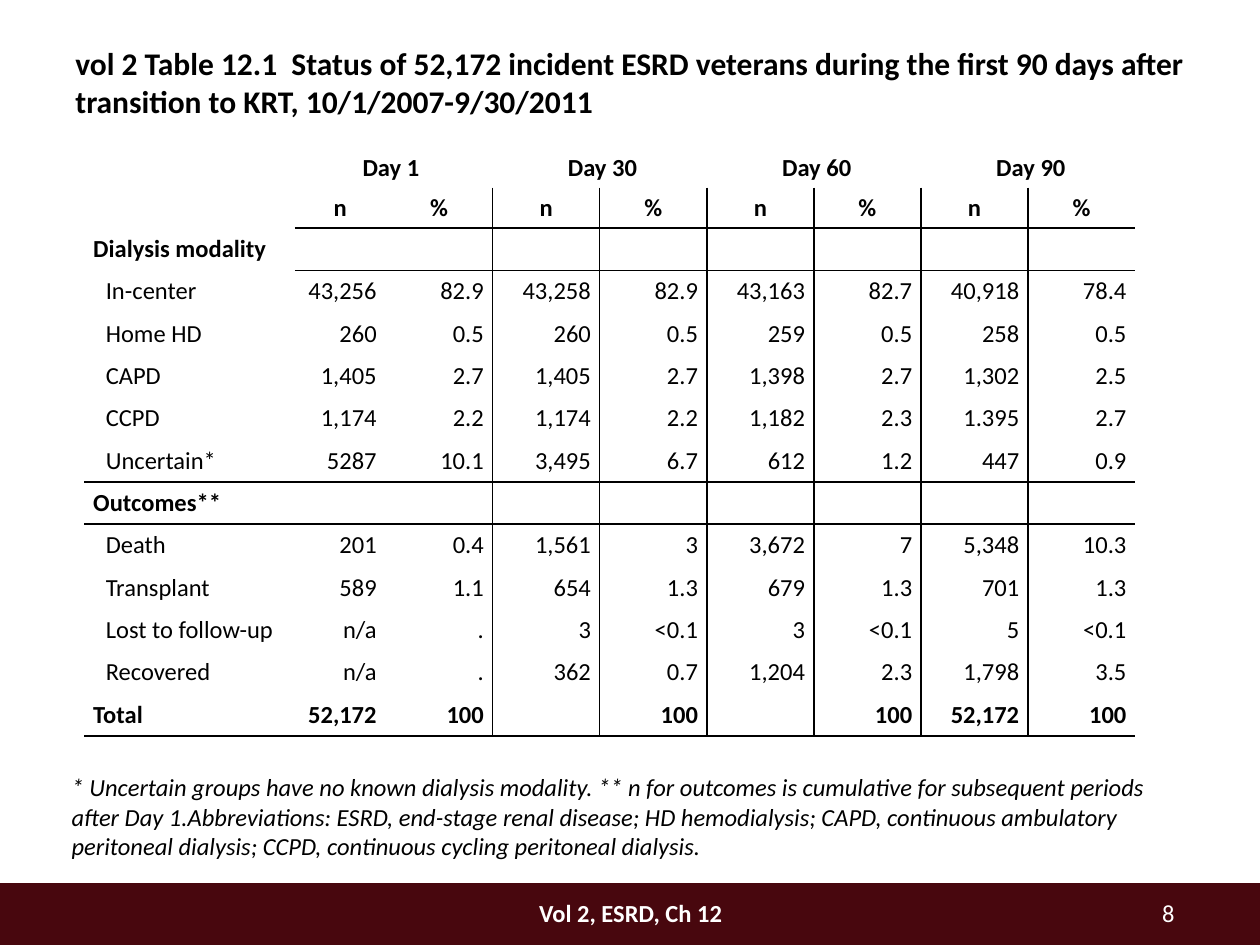
from lxml.etree import SubElement
from pptx import Presentation
from pptx.dml.color import RGBColor
from pptx.enum.shapes import MSO_SHAPE
from pptx.enum.text import MSO_ANCHOR, PP_ALIGN
from pptx.oxml.ns import qn
from pptx.util import Inches, Pt

COLORS = {"text": "000000", "footer": "48070E", "footer_text": "FFFFFF"}
FONT = "Calibri"
NO_GRID_STYLE = "{2D5ABB26-0587-4C30-8999-92F81FD0307C}"

TITLE = ("vol 2 Table 12.1  Status of 52,172 incident ESRD veterans during the first 90 days "
         "after transition to KRT, 10/1/2007-9/30/2011")
FOOTNOTE = ("* Uncertain groups have no known dialysis modality. ** n for outcomes is cumulative "
            "for subsequent periods after Day 1.Abbreviations: ESRD, end-stage renal disease; "
            "HD hemodialysis; CAPD, continuous ambulatory peritoneal dialysis; CCPD, continuous "
            "cycling peritoneal dialysis.")
DAYS = ["Day 1 ", " Day 30", " Day 60", " Day 90"]
ROWS = [
    ["", *(text for day in DAYS for text in (day, ""))],
    ["", *["n", "%"] * len(DAYS)],
    ["Dialysis modality", *[""] * 8],
    ["In-center", "43,256", "82.9", "43,258", "82.9", "43,163", "82.7", "40,918", "78.4"],
    ["Home HD", "260", "0.5", "260", "0.5", "259", "0.5", "258", "0.5"],
    ["CAPD", "1,405", "2.7", "1,405", "2.7", "1,398", "2.7", "1,302", "2.5"],
    ["CCPD", "1,174", "2.2", "1,174", "2.2", "1,182", "2.3", "1.395", "2.7"],
    ["Uncertain*", "5287", "10.1", "3,495", "6.7", "612", "1.2", "447", "0.9"],
    ["Outcomes**", *[""] * 8],
    ["Death", "201", "0.4", "1,561", "3", "3,672", "7", "5,348", "10.3"],
    ["Transplant", "589", "1.1", "654", "1.3", "679", "1.3", "701", "1.3"],
    ["Lost to follow-up", "n/a", ".", "3", "<0.1", "3", "<0.1", "5", "<0.1"],
    ["Recovered", "n/a", ".", "362", "0.7", "1,204", "2.3", "1,798", "3.5"],
    ["Total", "52,172", "100", "", "100", "", "100", "52,172", "100"],
]
HEADER_ROWS = 2
BOLD_ROWS = {0, 1, 2, 8, 13}
RULED_ROWS = {1, 7, 13}
DIVIDED_COLUMNS = {2, 4, 6}
COLUMN_WIDTHS = [1.67, 0.72] + [0.85] * 7
TABLE_HEIGHT = 4.67
HEADER_HEIGHT = 0.32


def style_paragraph(paragraph, size=14, color="text", bold=False, italic=False, align=PP_ALIGN.LEFT):
    paragraph.alignment = align
    for run in paragraph.runs:
        run.font.name = FONT
        run.font.size = Pt(size)
        run.font.bold = bold
        run.font.italic = italic
        run.font.color.rgb = RGBColor.from_string(COLORS[color])


def add_text(slide, text, left, top, width, height, **style):
    text_frame = slide.shapes.add_textbox(
        Inches(left), Inches(top), Inches(width), Inches(height)).text_frame
    text_frame.word_wrap = True
    text_frame.text = text
    style_paragraph(text_frame.paragraphs[0], **style)


def cell_borders(row, column):
    rules = {
        "a:lnL": row > 0 and column - 1 in DIVIDED_COLUMNS,
        "a:lnR": row > 0 and column in DIVIDED_COLUMNS,
        "a:lnT": row - 1 in RULED_ROWS and (column > 0 or row > HEADER_ROWS),
        "a:lnB": row in RULED_ROWS and (column > 0 or row >= HEADER_ROWS),
    }
    return [tag for tag, drawn in rules.items() if drawn]


def add_border(cell, tag):
    line = SubElement(cell._tc.get_or_add_tcPr(), qn(tag), w=str(Pt(1)))
    fill = SubElement(line, qn("a:solidFill"))
    SubElement(fill, qn("a:srgbClr"), val=COLORS["text"])


def fill_cell(cell, row, column, text):
    cell.margin_left = cell.margin_right = Inches(0.07)
    cell.margin_top = cell.margin_bottom = 0
    cell.vertical_anchor = MSO_ANCHOR.MIDDLE
    for tag in cell_borders(row, column):
        add_border(cell, tag)
    cell.fill.background()
    if not text:
        return
    cell.text_frame.text = text
    paragraph = cell.text_frame.paragraphs[0]
    if row < HEADER_ROWS:
        align = PP_ALIGN.CENTER
    else:
        align = PP_ALIGN.RIGHT if column else PP_ALIGN.LEFT
    style_paragraph(paragraph, bold=row in BOLD_ROWS, align=align)
    if column == 0 and row not in BOLD_ROWS:
        paragraph._p.get_or_add_pPr().set("marL", str(Inches(0.1)))


def add_status_table(slide):
    table = slide.shapes.add_table(
        len(ROWS), len(COLUMN_WIDTHS), Inches(0.67), Inches(1.17),
        Inches(sum(COLUMN_WIDTHS)), Inches(TABLE_HEIGHT)).table
    table.first_row = table.horz_banding = False
    table._tbl.tblPr.find(qn("a:tableStyleId")).text = NO_GRID_STYLE
    for column, width in zip(table.columns, COLUMN_WIDTHS):
        column.width = Inches(width)
    body_height = (TABLE_HEIGHT - HEADER_ROWS * HEADER_HEIGHT) / (len(ROWS) - HEADER_ROWS)
    for index, row in enumerate(table.rows):
        row.height = Inches(HEADER_HEIGHT if index < HEADER_ROWS else body_height)
    for column in range(1, len(COLUMN_WIDTHS), 2):
        table.cell(0, column).merge(table.cell(0, column + 1))
    for row, texts in enumerate(ROWS):
        for column, text in enumerate(texts):
            fill_cell(table.cell(row, column), row, column, text)


def main():
    presentation = Presentation()
    presentation.slide_width = Inches(10)
    presentation.slide_height = Inches(7.5)
    slide = presentation.slides.add_slide(presentation.slide_layouts[6])

    footer = slide.shapes.add_shape(
        MSO_SHAPE.RECTANGLE, 0, Inches(7.01), Inches(10), Inches(0.5))
    footer.shadow.inherit = False
    footer.fill.solid()
    footer.fill.fore_color.rgb = RGBColor.from_string(COLORS["footer"])
    footer.line.fill.background()

    add_text(slide, "8", 8.42, 7.08, 1, 0.3, color="footer_text", align=PP_ALIGN.RIGHT)
    add_text(slide, FOOTNOTE, 0.47, 6.08, 9.08, 0.58, italic=True)
    add_text(slide, TITLE, 0.5, 0.3, 9, 0.62, size=18, bold=True)
    add_status_table(slide)
    add_text(slide, "Vol 2, ESRD, Ch 12", 3.92, 7.08, 2.17, 0.33,
             color="footer_text", bold=True, align=PP_ALIGN.CENTER)
    presentation.save("out.pptx")


if __name__ == "__main__":
    main()
